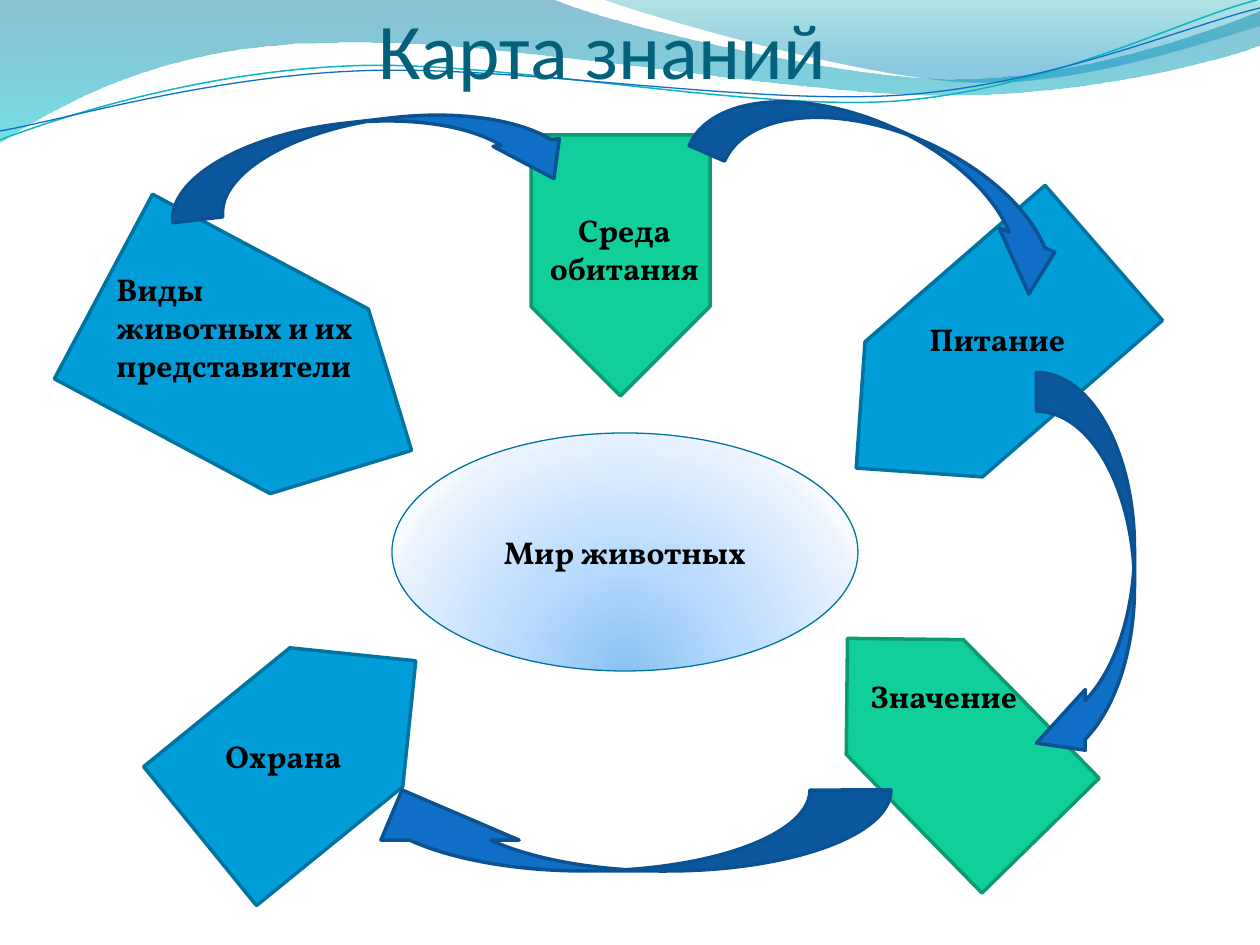
"""Build the knowledge map slide about the animal world."""
from lxml.etree import SubElement
from pptx import Presentation
from pptx.dml.color import RGBColor
from pptx.enum.shapes import MSO_SHAPE
from pptx.enum.text import MSO_ANCHOR, MSO_AUTO_SIZE, PP_ALIGN
from pptx.oxml.ns import qn
from pptx.util import Pt

SCALE = 914400 / 126
COLORS = {
    "title": "04617B", "text": "000000",
    "blue": "009DD9", "blue edge": "0074A1",
    "green": "10CF9B", "green edge": "0C9973",
    "arrow": "0F6FC6", "arrow edge": "0B5292", "teal line": "0AB8BF",
}


def place(shapes, kind, left, top, width, height, fill, edge, weight=2, turn=0):
    """Add a preset shape with a plain fill and outline."""
    shape = shapes.add_shape(kind, *(round(n * SCALE) for n in (left, top, width, height)))
    shape.rotation = turn
    shape.shadow.inherit = False
    shape.fill.solid()
    shape.fill.fore_color.rgb = RGBColor.from_string(COLORS[fill])
    shape.line.color.rgb = RGBColor.from_string(COLORS[edge])
    shape.line.width = Pt(weight)
    return shape


def shade(shape, stops, circle=False):
    """Give a shape a gradient of (position, colour, opacity) stops."""
    shape.fill.gradient()
    gradient = shape._element.spPr.find(qn("a:gradFill"))
    for child in list(gradient):
        gradient.remove(child)
    stop_list = SubElement(gradient, qn("a:gsLst"))
    for position, color, opacity in stops:
        stop = SubElement(stop_list, qn("a:gs"), pos=str(position * 1000))
        value = SubElement(stop, qn("a:srgbClr"), val=color)
        SubElement(value, qn("a:alpha"), val=str(opacity * 1000))
    if circle:
        focus = SubElement(gradient, qn("a:path"), path="circle")
        SubElement(focus, qn("a:fillToRect"), l="50000", t="130000", r="50000", b="-30000")
    else:
        SubElement(gradient, qn("a:lin"), ang="5400000", scaled="0")


deck = Presentation()
deck.slide_width, deck.slide_height = round(1260 * SCALE), round(945 * SCALE)
page = deck.slides.add_slide(deck.slide_layouts[5])
shapes = page.shapes

waves = [
    ([(0, 0), (554, 0), (600, 21, 837, 79, 955, 79), (1075, 79, 1207, 33, 1260, 11),
      (1260, 45), (1237, 55, 1096, 96, 940, 95), (784, 95, 481, 35, 324, 43),
      (163, 45, 58, 105, 0, 142)], [(0, "0074A1", 45), (100, "00C6CF", 55)], None, 0),
    ([(604, 0), (641, 14, 859, 78, 969, 82), (1079, 87, 1211, 40, 1260, 26), (1260, 0)],
     [(0, "00A1A9", 30), (80, "008BBF", 45)], None, 0),
    ([(0, 140), (60, 117, 199, 72, 349, 66), (496, 59, 747, 112, 898, 101),
      (1050, 89, 1182, 19, 1257, 0)], None, "teal line", 0.85),
    ([(0, 131), (59, 121, 207, 77, 357, 71), (508, 64, 752, 106, 903, 95),
      (1053, 84, 1186, 26, 1260, 8)], None, "arrow", 0.75),
]
for steps, stops, color, weight in waves:
    corners = [tuple(round(n * SCALE) for n in step[-2:]) for step in steps]
    builder = shapes.build_freeform(*corners[0], scale=1.0)
    builder.add_line_segments(corners[1:], close=bool(stops))
    wave = builder.convert_to_shape()
    wave.shadow.inherit = False
    segments = list(wave._element.iter(qn("a:lnTo")))
    for segment, step in zip(segments, steps[1:]):
        if len(step) == 6:
            segment.tag = qn("a:cubicBezTo")
            for index in (0, 2):
                handle = SubElement(segment, qn("a:pt"),
                                    x=str(round(step[index] * SCALE) - wave.left),
                                    y=str(round(step[index + 1] * SCALE) - wave.top))
                segment.insert(index // 2, handle)
    if stops:
        shade(wave, stops)
        wave.line.fill.background()
    else:
        wave.fill.background()
        wave.line.color.rgb = RGBColor.from_string(COLORS[color])
        wave.line.width = Pt(weight)

title = shapes.title
shapes._spTree.append(title._element)
title.left, title.top, title.width, title.height = (
    round(n * SCALE) for n in (35, 0, 1134, 95))
frame = title.text_frame
frame.text = "Карта знаний"
frame.auto_size = MSO_AUTO_SIZE.NONE
frame.vertical_anchor = MSO_ANCHOR.BOTTOM
frame.margin_left = frame.margin_right = frame.margin_bottom = 0
frame.margin_top = round(6 * SCALE)
frame.paragraphs[0].alignment = PP_ALIGN.CENTER
span = frame.paragraphs[0].runs[0]
span.font.size = Pt(45)
span.font.name = "Calibri"
span.font.color.rgb = RGBColor.from_string(COLORS["title"])

center = place(shapes, MSO_SHAPE.OVAL, 392, 433, 466, 238, "blue", "blue edge", 0.75)
shade(center, [(0, "8BC2F1", 100), (43, "B9DBFD", 100), (93, "EAF3FE", 100),
               (100, "F8FBFF", 100)], circle=True)
center.text_frame.text = "Мир животных"
center.text_frame.vertical_anchor = MSO_ANCHOR.MIDDLE

pentagons = [
    (83, 264, 349, 209, "blue", 28, None),
    (490, 176, 261, 179, "green", 90, None),
    (169, 659, 278, 179, "blue", 320.9, None),
    (816, 271, 328, 179, "blue", 319, "flipH"),
    (806, 655, 276, 164, "green", 225.6, "flipV"),
]
for left, top, width, height, color, turn, flip in pentagons:
    pentagon = place(shapes, MSO_SHAPE.PENTAGON, left, top, width, height,
                     color, f"{color} edge", turn=turn)
    if flip:
        pentagon._element.spPr.xfrm.set(flip, "1")

arrows = [
    (167, 120, 417, 79, 353.4, (0.635, 0.845, 0.494)),
    (692, 132, 401, 98, 23.6, (0.395, 0.619, 0.497)),
    (885, 524, 401, 98, 90, (0.395, 0.619, 0.497)),
    (333, 790, 558, 81, 180, (1.501, 1.706, 0.618)),
]
for left, top, width, height, turn, bends in arrows:
    arrow = place(shapes, MSO_SHAPE.CURVED_DOWN_ARROW, left, top, width, height,
                  "arrow", "arrow edge", turn=turn)
    for index, bend in enumerate(bends):
        arrow.adjustments[index] = bend

labels = [
    ("Среда обитания", PP_ALIGN.CENTER, 530, 205, 189, 89),
    ("Виды животных и их представители", PP_ALIGN.LEFT, 104, 264, 268, 165),
    ("Питание", PP_ALIGN.LEFT, 917, 314, 218, 50),
    ("Значение", PP_ALIGN.LEFT, 858, 671, 218, 50),
    ("Охрана", PP_ALIGN.LEFT, 213, 731, 208, 50),
]
captions = [(center, PP_ALIGN.CENTER)]
for text, alignment, *bounds in labels:
    box = shapes.add_textbox(*(round(n * SCALE) for n in bounds))
    box.text_frame.word_wrap = True
    box.text_frame.text = text
    captions.append((box, alignment))
for box, alignment in captions:
    para = box.text_frame.paragraphs[0]
    para.alignment = alignment
    font = para.runs[0].font
    font.name, font.size, font.bold = "Vollkorn", Pt(18), True
    font.color.rgb = RGBColor.from_string(COLORS["text"])

deck.save("out.pptx")
